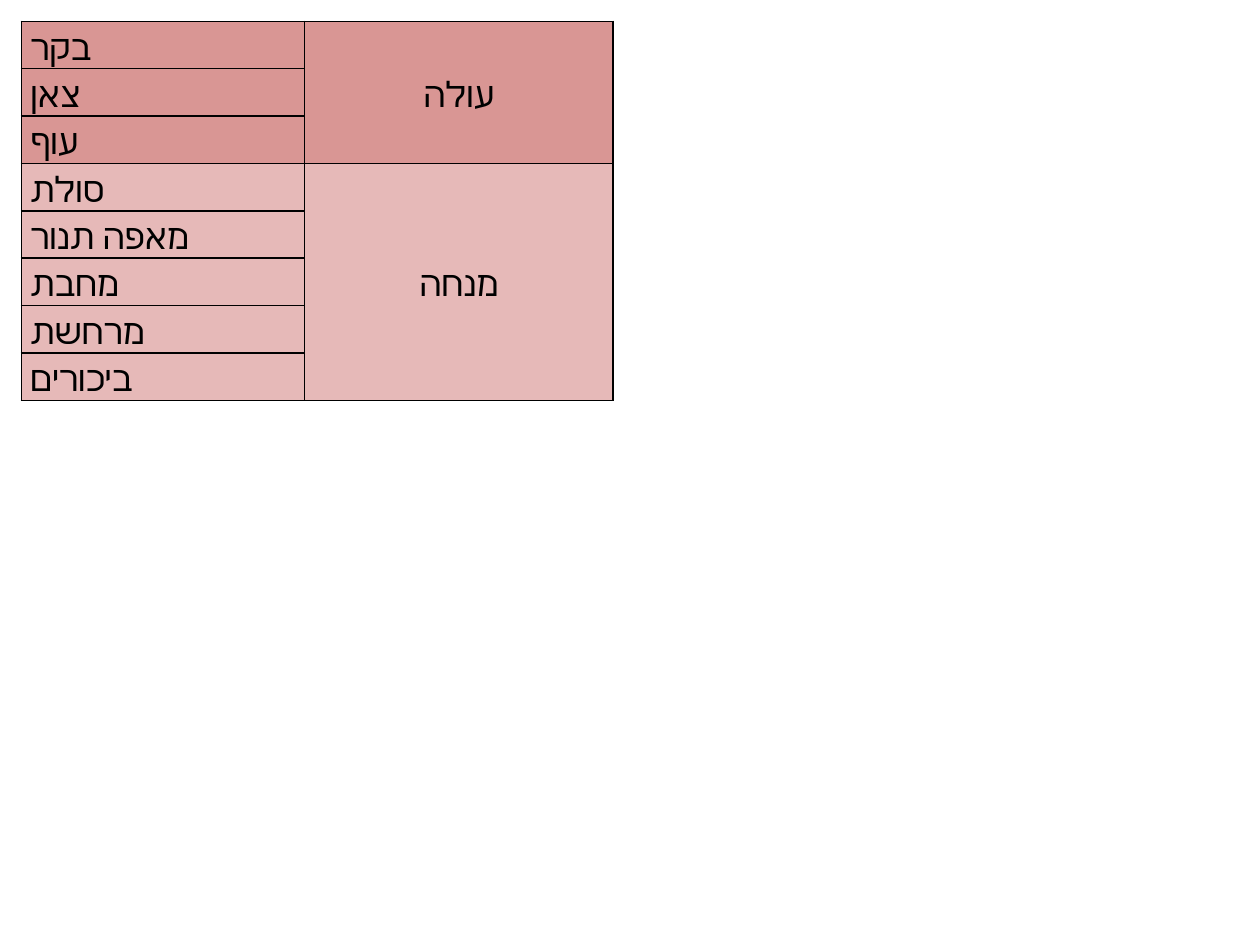
import pptx
import pptx.dml.color
import pptx.enum.text
import pptx.oxml
import pptx.oxml.ns
import pptx.util
from pptx.util import Cm, Pt

RGB = pptx.dml.color.RGBColor
ALIGN = pptx.enum.text.PP_ALIGN
ANCHOR = pptx.enum.text.MSO_ANCHOR
BLACK = RGB(0, 0, 0)
ROSE = RGB(0xD9, 0x96, 0x94)
PINK = RGB(0xE6, 0xB9, 0xB8)
FONT = "Roboto"

GROUPS = [
    ("עולה", ROSE, ["בקר", "צאן", "עוף"]),
    ("מנחה", PINK, ["סולת", "מאפה תנור", "מחבת", "מרחשת", "ביכורים"]),
]


def write(cell, text, size=20, color=BLACK, align=ALIGN.LEFT, anchor=ANCHOR.TOP):
    cell.vertical_anchor = anchor
    para = cell.text_frame.paragraphs[0]
    para.alignment = align
    para.line_spacing = 1.15
    run = para.add_run()
    run.text = text
    run.font.size = Pt(size)
    run.font.name = FONT
    run.font.color.rgb = color
    # Hebrew takes its face from the complex-script font
    face = pptx.oxml.parse_xml(
        f'<a:cs {pptx.oxml.ns.nsdecls("a")} typeface="{FONT}"/>')
    run.font._element.append(face)


def frame(cell, color=BLACK, width=1):
    """Draw a line on all four sides of the cell."""
    props = cell._tc.get_or_add_tcPr()
    for place, side in enumerate(("lnL", "lnR", "lnT", "lnB")):
        line = pptx.oxml.parse_xml(
            f'<a:{side} {pptx.oxml.ns.nsdecls("a")} w="{Pt(width)}">'
            f'<a:solidFill><a:srgbClr val="{color}"/></a:solidFill></a:{side}>')
        props.insert(place, line)


def style(cell, fill):
    cell.margin_left = cell.margin_right = Cm(0.18)
    cell.margin_top = cell.margin_bottom = 0
    cell.fill.solid()
    cell.fill.fore_color.rgb = fill
    frame(cell)


def add_grid(slide, left, top, widths, step):
    """Place the table of offerings: kinds on the left, merged groups on the right."""
    count = sum(len(kinds) for _, _, kinds in GROUPS)
    shape = slide.shapes.add_table(
        count, 2, left, top, sum(widths), step * count)
    table = shape.table
    table.first_row = table.horz_banding = False
    for col, width in zip(table.columns, widths):
        col.width = width
    row = 0
    for name, fill, kinds in GROUPS:
        head = table.cell(row, 1)
        head.merge(table.cell(row + len(kinds) - 1, 1))
        write(head, name, align=ALIGN.CENTER, anchor=ANCHOR.MIDDLE)
        for kind in kinds:
            write(table.cell(row, 0), kind)
            for col in range(2):
                style(table.cell(row, col), fill)
            row += 1


def main():
    deck = pptx.Presentation()
    deck.slide_width, deck.slide_height = Cm(25.4), Cm(19.05)
    slide = deck.slides.add_slide(deck.slide_layouts[6])
    add_grid(slide, Cm(0.43), Cm(0.43), [Cm(5.71), Cm(6.22)], Cm(0.95))
    deck.save("out.pptx")


if __name__ == "__main__":
    main()
